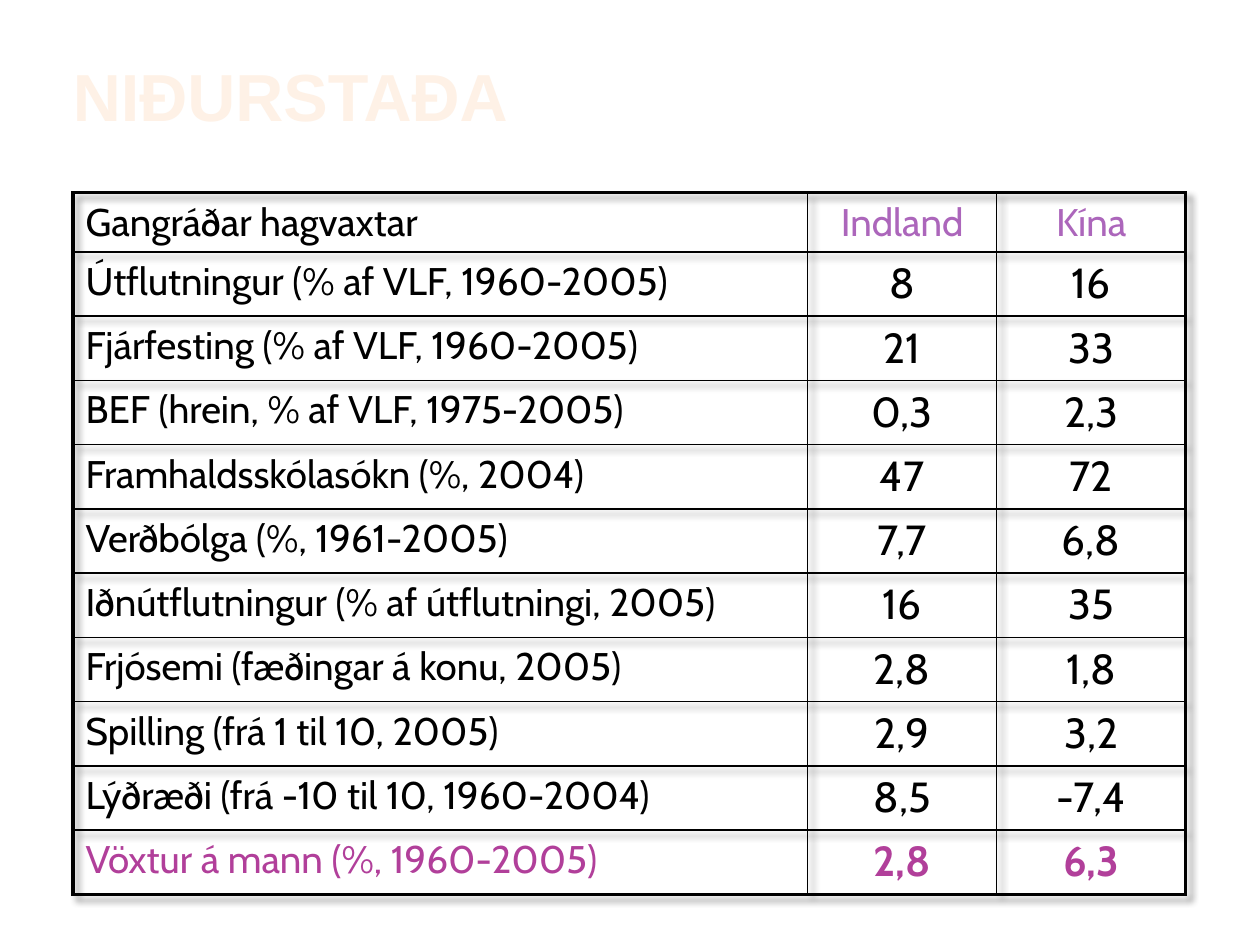
from lxml.etree import SubElement as Sub
from pptx import Presentation
from pptx.dml.color import RGBColor
from pptx.enum.text import PP_ALIGN as Align
from pptx.oxml import parse_xml
from pptx.oxml.ns import nsdecls, qn
from pptx.util import Inches, Pt

BLACK = RGBColor(0x00, 0x00, 0x00)
LILAC = RGBColor(0xAC, 0x66, 0xBB)
PLUM = RGBColor(0xB1, 0x3F, 0x9A)
CREAM = RGBColor(0xFE, 0xF1, 0xE6)


def write(frame, text, size=22, color=BLACK, bold=False, font="Cabin", align=Align.LEFT):
    para = frame.paragraphs[0]
    para.alignment = align
    run = para.add_run()
    run.text = text
    run.font.name = font
    run.font.size = Pt(size)
    run.font.bold = bold
    run.font.color.rgb = color


def edge(cell, side, width):
    line = Sub(cell._tc.get_or_add_tcPr(), qn("a:ln" + side), w=str(Pt(width)))
    fill = Sub(line, qn("a:solidFill"))
    Sub(fill, qn("a:srgbClr"), val=str(BLACK))


rows = [
    ("Gangráðar hagvaxtar", "Indland", "Kína"),
    ("Útflutningur (% af VLF, 1960-2005)", "8", "16"),
    ("Fjárfesting (% af VLF, 1960-2005)", "21", "33"),
    ("BEF (hrein, % af VLF, 1975-2005)", "0,3", "2,3"),
    ("Framhaldsskólasókn (%, 2004)", "47", "72"),
    ("Verðbólga (%, 1961-2005)", "7,7", "6,8"),
    ("Iðnútflutningur (% af útflutningi, 2005)", "16", "35"),
    ("Frjósemi (fæðingar á konu, 2005)", "2,8", "1,8"),
    ("Spilling (frá 1 til 10, 2005)", "2,9", "3,2"),
    ("Lýðræði (frá -10 til 10, 1960-2004)", "8,5", "-7,4"),
    ("Vöxtur á mann (%, 1960-2005)", "2,8", "6,3"),
]
widths = [5.83, 1.5, 1.5]
last = len(rows) - 1

deck = Presentation()
deck.slide_width = Inches(10)
deck.slide_height = Inches(7.5)
slide = deck.slides.add_slide(deck.slide_layouts[6])

title = slide.shapes.add_textbox(Inches(0.48), Inches(0.39), Inches(8.9), Inches(0.71))
title.text_frame.word_wrap = True
write(title.text_frame, "NIÐURSTAÐA", size=38, color=CREAM, bold=True, font="Arial")

table = slide.shapes.add_table(
    len(rows), len(widths), Inches(0.58), Inches(1.53), Inches(sum(widths)), Inches(5.53)
).table
table.first_row = False
table.horz_banding = False
props = table._tbl.tblPr
props.find(qn("a:tableStyleId")).text = "{2D5ABB26-0587-4C30-8999-92F81FD0307C}"
props.insert(0, parse_xml(
    f'<a:effectLst {nsdecls("a")}><a:outerShdw blurRad="50800" dist="50800" dir="2700000">'
    '<a:srgbClr val="000000"><a:alpha val="40000"/></a:srgbClr></a:outerShdw></a:effectLst>'
))
for col, width in zip(table.columns, widths):
    col.width = Inches(width)

for r, row in enumerate(rows):
    table.rows[r].height = Inches(0.47 if r == 0 else 0.51)
    for c, text in enumerate(row):
        cell = table.cell(r, c)
        color = PLUM if r == last else LILAC if r == 0 and c else BLACK
        write(
            cell.text_frame, text, color=color,
            size=24 if r and c else 22,
            bold=r == last and c > 0,
            align=Align.CENTER if c else Align.LEFT,
        )
        outer = {"L": c == 0, "R": c == 2, "T": r == 0, "B": r == last}
        for side, thick in outer.items():
            edge(cell, side, 2.25 if thick else 1)
        cell.fill.background()

deck.save("out.pptx")
